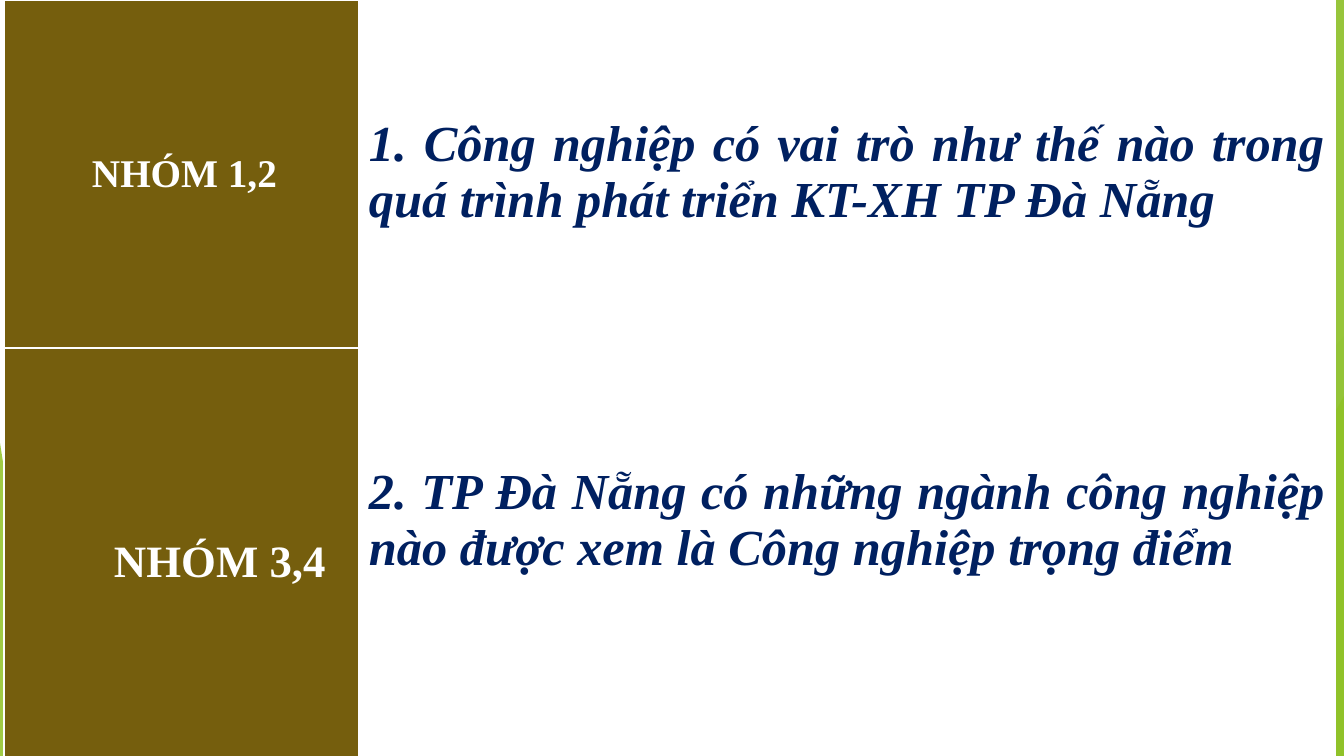
from dataclasses import dataclass
from lxml.etree import SubElement
from pptx import Presentation
from pptx.dml.color import RGBColor
from pptx.enum.shapes import MSO_SHAPE
from pptx.enum.text import PP_ALIGN
from pptx.oxml.ns import qn
from pptx.util import Pt

WIDTH, HEIGHT = 1344, 756
EMU_PER_PX = 12192000 / WIDTH


@dataclass(frozen=True)
class Theme:
    font: str = "Times New Roman"
    label_fill: str = "755E0D"
    label_text: str = "FFFFFF"
    question_fill: str = "FFFFFF"
    question_text: str = "002060"
    green: str = "90C226"
    mid_green: str = "54A021"
    dark_green: str = "3F7819"
    lime: str = "C0E474"
    question_size: int = 36
    first_label_size: int = 28
    second_label_size: int = 32


THEME = Theme()

GROUPS = [
    {"label": "NHÓM 1,2", "size": THEME.first_label_size, "indent": 88, "drop": 153, "height": 348,
     "question": "1. Công nghiệp có vai trò như thế nào trong quá trình phát triển KT-XH TP Đà Nẵng"},
    {"label": "NHÓM 3,4", "size": THEME.second_label_size, "indent": 110, "drop": 190, "height": 423,
     "question": "2. TP Đà Nẵng có những ngành công nghiệp nào được xem là Công nghiệp trọng điểm"},
]
TABLE_LEFT, TABLE_TOP = 4, 0
COLUMN_WIDTHS = [355, 976]
CELL_MARGIN = 10
QUESTION_DROP = 117

FACETS = [
    ("band", (1238, 1012), THEME.green, 30),
    ("band", (1058, 1192), THEME.green, 20),
    ("triangle", (985, 336, 359, 1), THEME.mid_green, 72),
    ("band", (1029, 1301), THEME.dark_green, 70),
    ("band", (1313, 1202), THEME.lime, 70),
    ("band", (1206, 1329), THEME.green, 65),
    ("triangle", (1143, 396, 201, 1), THEME.green, 80),
    ("triangle", (0, 443, 49, 0), THEME.green, 85),
]


def px(length):
    return round(length * EMU_PER_PX)


def add_band(slide, top_x, bottom_x):
    builder = slide.shapes.build_freeform(px(top_x), px(-1), scale=1.0)
    corners = [(WIDTH, -1), (WIDTH, HEIGHT), (bottom_x, HEIGHT)]
    builder.add_line_segments([(px(x), px(y)) for x, y in corners], close=True)
    return builder.convert_to_shape()


def add_triangle(slide, left, top, width, apex):
    shape = slide.shapes.add_shape(
        MSO_SHAPE.ISOSCELES_TRIANGLE, px(left), px(top), px(width), px(HEIGHT - top))
    shape.adjustments[0] = apex
    return shape


def paint(shape, color, opacity):
    shape.shadow.inherit = False
    shape.line.fill.background()
    shape.fill.solid()
    shape.fill.fore_color.rgb = RGBColor.from_string(color)
    color_element = next(shape.element.spPr.iter(qn("a:srgbClr")))
    SubElement(color_element, qn("a:alpha"), val=str(opacity * 1000))


def fill_cell(cell, text, size, fill, color, indent, drop, italic):
    cell.fill.solid()
    cell.fill.fore_color.rgb = RGBColor.from_string(fill)
    cell.margin_left, cell.margin_top = px(indent), px(drop)
    cell.margin_right = px(CELL_MARGIN)
    paragraph = cell.text_frame.paragraphs[0]
    paragraph.text = text
    paragraph.alignment = PP_ALIGN.JUSTIFY
    font = paragraph.font
    font.name, font.size = THEME.font, Pt(size)
    font.bold, font.italic = True, italic
    font.color.rgb = RGBColor.from_string(color)


def add_group_table(slide):
    heights = [group["height"] for group in GROUPS]
    table = slide.shapes.add_table(
        len(GROUPS), len(COLUMN_WIDTHS), px(TABLE_LEFT), px(TABLE_TOP),
        px(sum(COLUMN_WIDTHS)), px(sum(heights))).table
    for column, width in zip(table.columns, COLUMN_WIDTHS):
        column.width = px(width)
    for index, group in enumerate(GROUPS):
        table.rows[index].height = px(group["height"])
        fill_cell(table.cell(index, 0), group["label"], group["size"], THEME.label_fill,
                  THEME.label_text, group["indent"], group["drop"], False)
        fill_cell(table.cell(index, 1), group["question"], THEME.question_size, THEME.question_fill,
                  THEME.question_text, CELL_MARGIN, QUESTION_DROP, True)


def main():
    presentation = Presentation()
    presentation.slide_width, presentation.slide_height = px(WIDTH), px(HEIGHT)
    slide = presentation.slides.add_slide(presentation.slide_layouts[6])
    makers = {"band": add_band, "triangle": add_triangle}
    for kind, geometry, color, opacity in FACETS:
        paint(makers[kind](slide, *geometry), color, opacity)
    add_group_table(slide)
    presentation.save("out.pptx")


if __name__ == "__main__":
    main()
